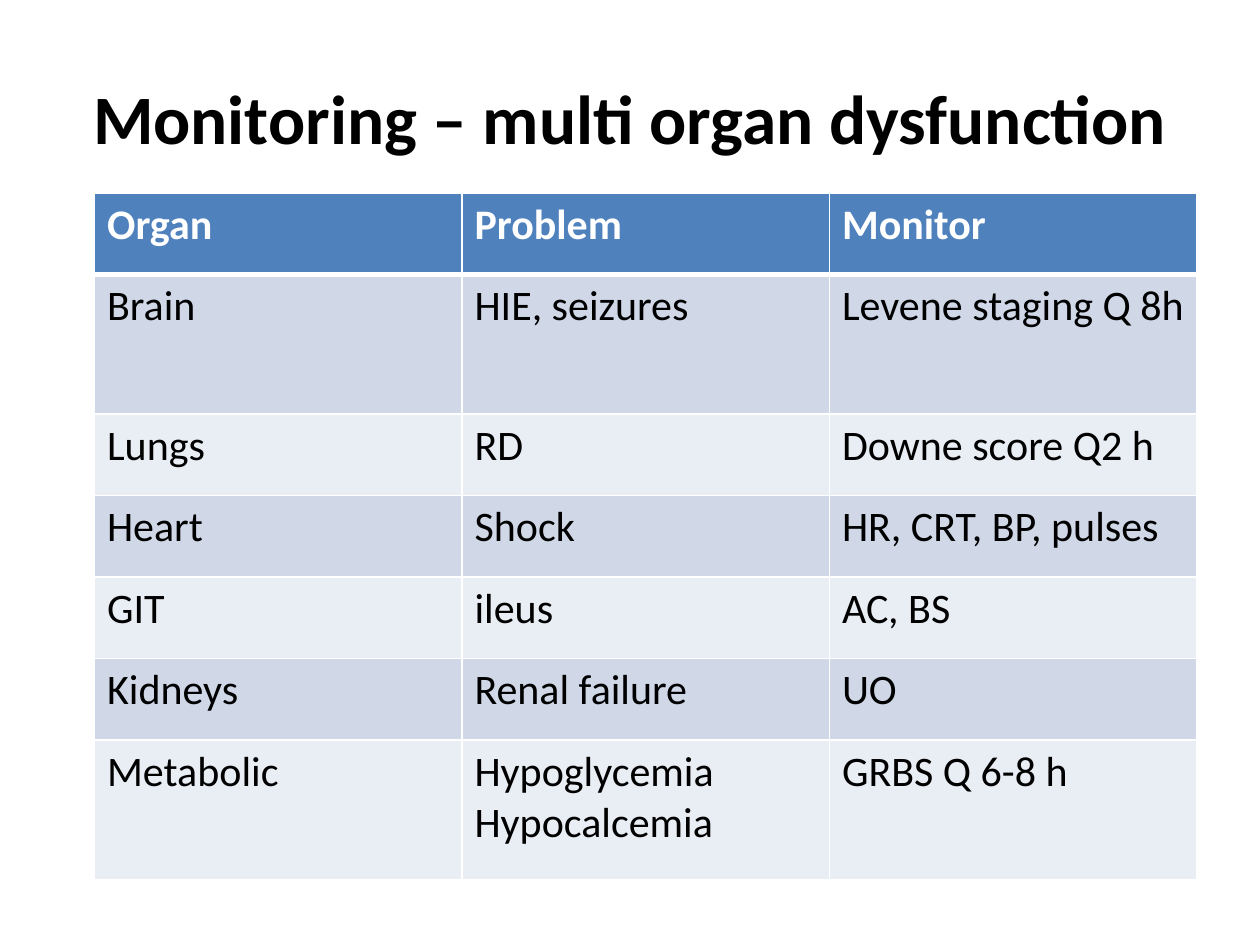
from typing import NamedTuple

from lxml import etree
from pptx import Presentation
from pptx.dml.color import RGBColor
from pptx.enum.text import MSO_ANCHOR, PP_ALIGN
from pptx.oxml.ns import qn
from pptx.util import Pt

MIDDLE = MSO_ANCHOR.MIDDLE
CENTER = PP_ALIGN.CENTER

FONT = "Calibri"
COLORS = {
    "text": "000000",
    "header_text": "FFFFFF",
    "header": "4F81BD",
    "odd_row": "D0D8E8",
    "even_row": "E9EDF4",
    "border": "FFFFFF",
}

COLUMN_WIDTH = 210
SHORT_ROW = 46.6
TALL_ROW = 79.7
THIN_LINE = 1
HEADER_LINE = 3


class OrganRow(NamedTuple):
    organ: str
    problem: str
    monitor: str
    height: float = SHORT_ROW


ROWS = [
    OrganRow("Organ", "Problem", "Monitor"),
    OrganRow("Brain", "HIE, seizures", "Levene staging Q 8h", TALL_ROW),
    OrganRow("Lungs", "RD", "Downe score Q2 h"),
    OrganRow("Heart", "Shock", "HR, CRT, BP, pulses"),
    OrganRow("GIT", "ileus", "AC, BS"),
    OrganRow("Kidneys", "Renal failure", "UO"),
    OrganRow("Metabolic", "Hypoglycemia\nHypocalcemia", "GRBS Q 6-8 h", TALL_ROW),
]


def color(name: str) -> RGBColor:
    return RGBColor.from_string(COLORS[name])


def add_span(para, text: str, size: float, color_name: str, bold: bool) -> None:
    span = para.add_run()
    span.text = text
    span.font.name = FONT
    span.font.size = Pt(size)
    span.font.bold = bold
    span.font.color.rgb = color(color_name)


def set_borders(cell, top: float, bottom: float) -> None:
    """Draw all four cell edges; call before the fill, which must follow them."""
    properties = cell._tc.get_or_add_tcPr()
    widths = {"a:lnL": THIN_LINE, "a:lnR": THIN_LINE, "a:lnT": top, "a:lnB": bottom}
    for tag, width in widths.items():
        line = etree.SubElement(properties, qn(tag), w=str(Pt(width)))
        fill = etree.SubElement(line, qn("a:solidFill"))
        etree.SubElement(fill, qn("a:srgbClr"), val=COLORS["border"])


def add_title(page, text: str) -> None:
    box = page.shapes.add_textbox(Pt(36), Pt(21.6), Pt(648), Pt(90))
    frame = box.text_frame
    frame.word_wrap = True
    frame.vertical_anchor = MIDDLE
    para = frame.paragraphs[0]
    para.alignment = CENTER
    add_span(para, text, 39.6, "text", True)


def fill_cell(cell, text: str, row_index: int) -> None:
    is_header = row_index == 0
    set_borders(
        cell,
        top=HEADER_LINE if row_index == 1 else THIN_LINE,
        bottom=HEADER_LINE if is_header else THIN_LINE,
    )
    band = "header" if is_header else "odd_row" if row_index % 2 else "even_row"
    cell.fill.solid()
    cell.fill.fore_color.rgb = color(band)
    frame = cell.text_frame
    for index, line in enumerate(text.split("\n")):
        para = frame.add_paragraph() if index else frame.paragraphs[0]
        add_span(para, line, 24, "header_text" if is_header else "text", is_header)


def add_organ_table(page, rows: list[OrganRow]) -> None:
    height = sum(row.height for row in rows)
    table = page.shapes.add_table(
        len(rows), 3, Pt(54), Pt(110.25), Pt(3 * COLUMN_WIDTH), Pt(height)
    ).table
    for column in table.columns:
        column.width = Pt(COLUMN_WIDTH)
    for row_index, row in enumerate(rows):
        table.rows[row_index].height = Pt(row.height)
        for column_index, text in enumerate((row.organ, row.problem, row.monitor)):
            fill_cell(table.cell(row_index, column_index), text, row_index)


def main() -> None:
    deck = Presentation()
    deck.slide_width = Pt(720)
    deck.slide_height = Pt(540)
    page = deck.slides.add_slide(deck.slide_layouts[6])
    add_title(page, "Monitoring – multi organ dysfunction")
    add_organ_table(page, ROWS)
    deck.save("out.pptx")


if __name__ == "__main__":
    main()
